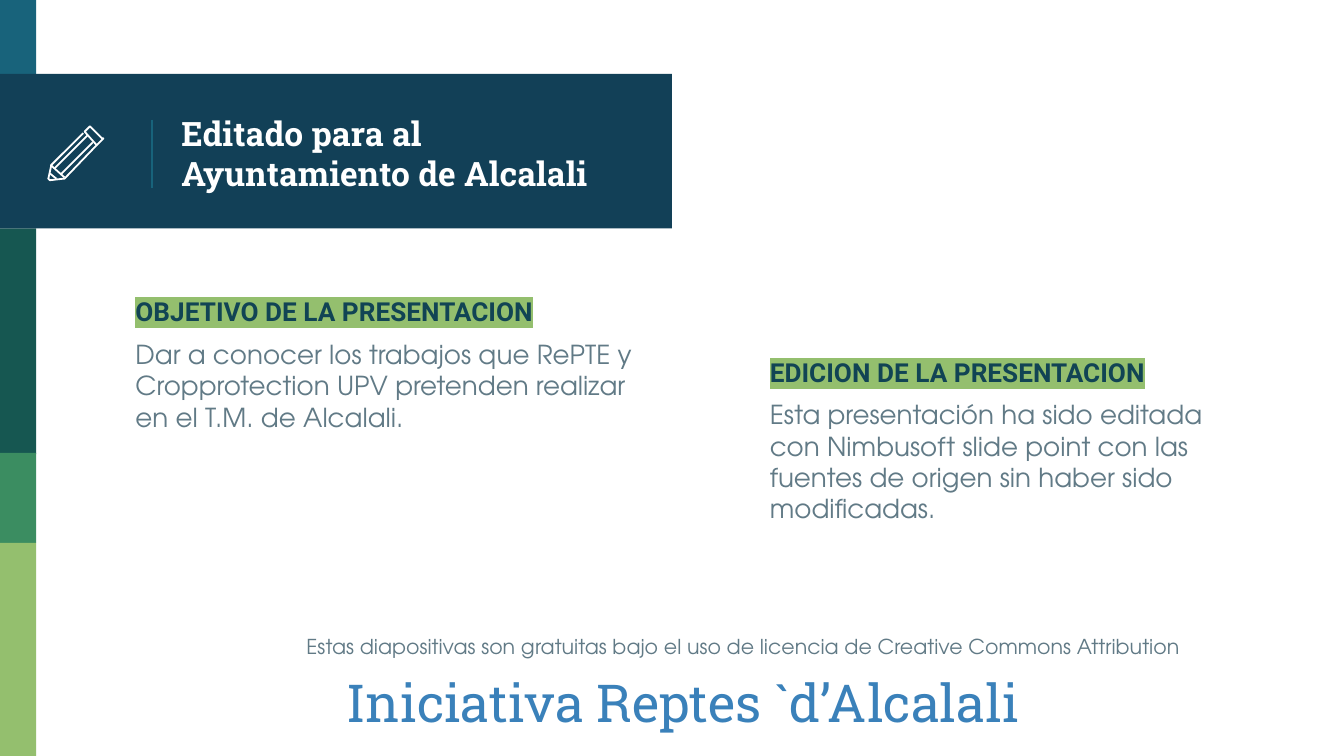
from pptx import Presentation
from pptx.dml.color import RGBColor
from pptx.enum.shapes import MSO_CONNECTOR, MSO_SHAPE
from pptx.enum.text import MSO_ANCHOR, MSO_AUTO_SIZE, PP_ALIGN
from pptx.oxml.ns import qn
from pptx.util import Inches, Pt
from lxml.etree import Element, SubElement

TEAL, NAVY, PINE, GREEN, LIME = "18637B", "124057", "165751", "3B8D61", "94BF6E"
WHITE, BLUE = "FFFFFF", "3A81BA"
SLAB, BODY = "Roboto Slab", "TeX Gyre Adventor"
HEADING = dict(name="Roboto", size=Pt(14), bold=True, color="114454")
PLAIN = dict(name=BODY, size=Pt(14), bold=False, color="617A86")

# Pencil strokes, relative to the icon's top left corner; True closes the outline
PENCIL = [
    ([(0.40, 0.09), (0.32, 0.01), (0.31, 0), (0.30, 0.01), (0.27, 0.04),
      (0.36, 0.14), (0.40, 0.10), (0.41, 0.09)], True),
    ([(0.33, 0.12), (0.09, 0.36)], False),
    ([(0.26, 0.05), (0.02, 0.29), (0.02, 0.30), (0, 0.39), (0.01, 0.40),
      (0.02, 0.40), (0.11, 0.39), (0.12, 0.39), (0.36, 0.14)], False),
    ([(0.05, 0.31), (0.29, 0.07)], False),
    ([(0.06, 0.39), (0.01, 0.35)], False),
    ([(0.02, 0.29), (0.12, 0.38)], False),
]


def rgb(color):
    return RGBColor.from_string(color)


def add_span(para, text, look, highlight=None):
    span = para.add_run()
    span.text = text
    for key, value in look.items():
        if key == "color":
            span.font.color.rgb = rgb(value)
        else:
            setattr(span.font, key, value)
    if highlight:
        mark = Element(qn("a:highlight"))
        SubElement(mark, qn("a:srgbClr"), val=highlight)
        span.font.fill._xPr.find(qn("a:solidFill")).addnext(mark)


def format_frame(frame, inset=0.1, **values):
    for side in ("left", "right", "top", "bottom"):
        setattr(frame, f"margin_{side}", Inches(inset))
    settings = dict(word_wrap=True, auto_size=MSO_AUTO_SIZE.NONE) | values
    for key, value in settings.items():
        setattr(frame, key, value)


def add_text_box(page, left, top, width, height, **values):
    box = page.shapes.add_textbox(*map(Inches, (left, top, width, height)))
    format_frame(box.text_frame, **values)
    return box.text_frame


def add_bar(page, left, top, width, height, color):
    bar = page.shapes.add_shape(
        MSO_SHAPE.RECTANGLE, *map(Inches, (left, top, width, height)))
    bar.shadow.inherit = False
    bar.fill.solid()
    bar.fill.fore_color.rgb = rgb(color)
    bar.line.fill.background()


def add_side_strip(page, left, width):
    for top, height, color in [(0, 0.58, TEAL), (1.7, 1.68, PINE),
                               (3.37, 0.67, GREEN), (4.04, 1.59, LIME)]:
        add_bar(page, left, top, width, height, color)


def add_pencil(page, left, top):
    icon = page.shapes.add_group_shape()
    for points, closed in PENCIL:
        corners = [(Inches(left + x), Inches(top + y)) for x, y in points]
        builder = icon.shapes.build_freeform(*corners[0], scale=1.0)
        builder.add_line_segments(corners[1:], close=closed)
        stroke = builder.convert_to_shape()
        stroke.shadow.inherit = False
        stroke.fill.background()
        stroke.line.color.rgb = rgb(WHITE)
        stroke.line.width = Pt(0.96)


def add_banner(page, left, top, width, height, text):
    """Dark band with a pencil, a thin divider and the slide title."""
    add_bar(page, left, top, width, height, NAVY)
    divider = page.shapes.add_connector(
        MSO_CONNECTOR.STRAIGHT, Inches(left + 1.13), Inches(top + 0.34),
        Inches(left + 1.13), Inches(top + 0.85))
    divider.line.color.rgb = rgb(TEAL)
    divider.line.width = Pt(0.75)
    SubElement(divider._element.spPr, qn("a:effectLst"))

    title = page.shapes.title
    place = dict(left=left + 1.25, top=top + 0.03, width=width - 1.25, height=1.12)
    for key, value in place.items():
        setattr(title, key, Inches(value))
    format_frame(title.text_frame, vertical_anchor=MSO_ANCHOR.MIDDLE)
    para = title.text_frame.paragraphs[0]
    para.alignment = PP_ALIGN.LEFT
    add_span(para, text, dict(name=SLAB, size=Pt(18), bold=True, color=WHITE))
    page.shapes._spTree.append(title._element)  # bring in front of the band
    add_pencil(page, left + 0.36, top + 0.39)


def add_section(page, left, top, width, height, heading, body):
    frame = add_text_box(page, left, top, width, height)
    first, second = frame.paragraphs[0], frame.add_paragraph()
    add_span(first, heading, HEADING, highlight=LIME)
    add_span(second, body, PLAIN)
    for para in (first, second):
        para.space_before = Pt(6)


def add_footer(page, left, top):
    """Licence line with the name of the initiative below it."""
    para = add_text_box(page, left, top, 7.32, 0.34).paragraphs[0]
    para.alignment = PP_ALIGN.RIGHT
    para.space_before = para.space_after = Pt(10)
    add_span(para, "Estas diapositivas son gratuitas bajo el uso de licencia "
             "de Creative Commons Attribution ", PLAIN | dict(size=Pt(11)))

    frame = add_text_box(page, left + 0.87, top + 0.32, 5.28, 0.57, word_wrap=False,
                         auto_size=MSO_AUTO_SIZE.SHAPE_TO_FIT_TEXT)
    frame.margin_top = frame.margin_bottom = Inches(0.05)
    add_span(frame.paragraphs[0], "Iniciativa Reptes `d’Alcalali",
             dict(name=SLAB, size=Pt(28), color=BLUE))


def main():
    deck = Presentation()
    deck.slide_width = Inches(10)
    deck.slide_height = deck.slide_width * 9 // 16
    page = deck.slides.add_slide(deck.slide_layouts[5])
    add_side_strip(page, 0, 0.27)
    add_banner(page, 0, 0.55, 5, 1.15, "Editado para al Ayuntamiento de Alcalali")
    add_section(page, 0.91, 2.1, 3.94, 1.44, "OBJETIVO DE LA PRESENTACION",
                "Dar a conocer los trabajos que RePTE y Cropprotection UPV "
                "pretenden realizar en el T.M. de Alcalali.")
    add_section(page, 5.63, 2.55, 3.46, 1.13, "EDICION DE LA PRESENTACION",
                "Esta presentación ha sido editada con Nimbusoft slide point con "
                "las fuentes de origen sin haber sido modificadas.")
    add_footer(page, 1.61, 4.62)
    deck.save("out.pptx")


if __name__ == "__main__":
    main()
